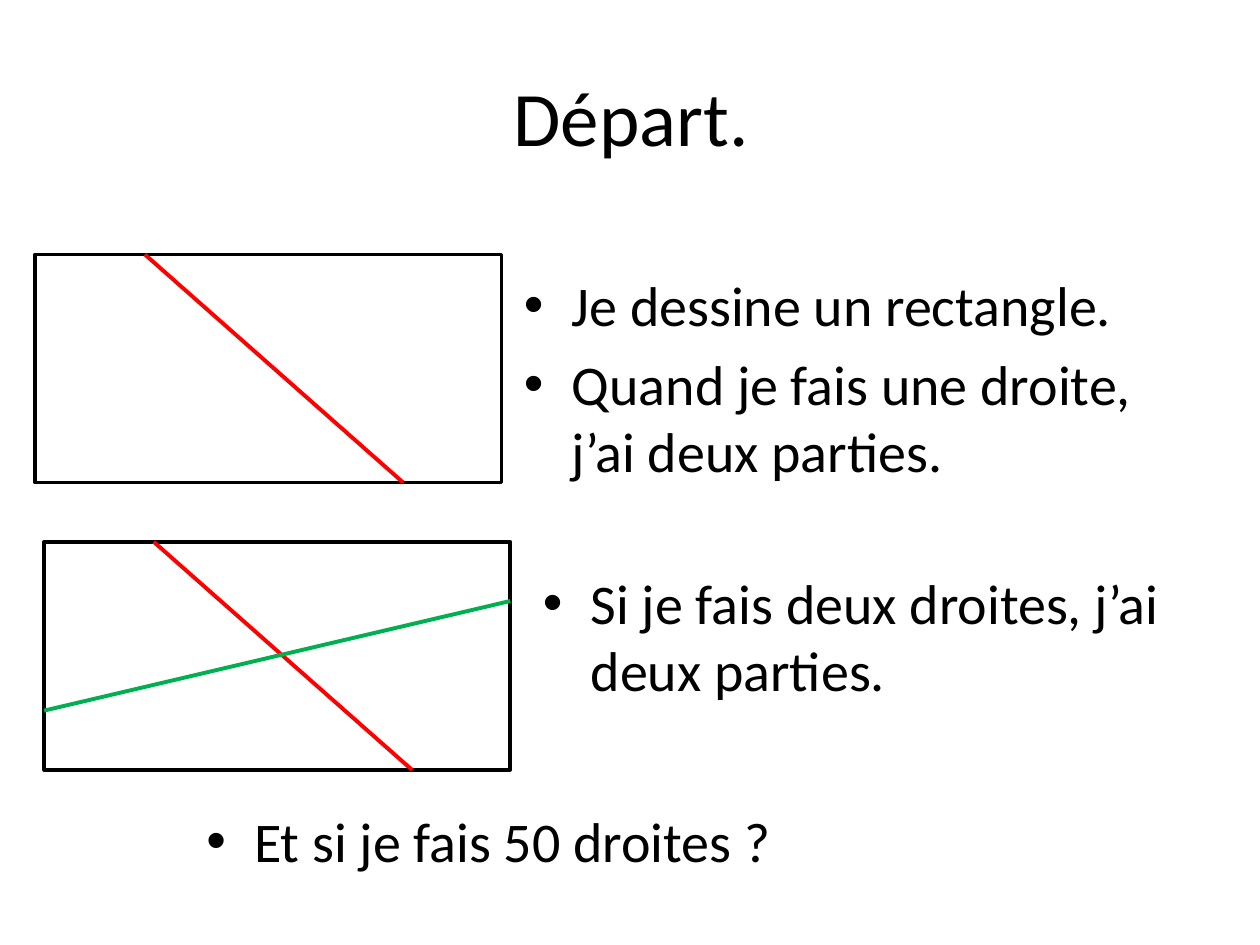
"""Build the "Départ." slide: rectangles divided by straight lines."""
from lxml import etree
from pptx import Presentation
from pptx.dml.color import RGBColor
from pptx.enum import shapes, text
from pptx.oxml import ns
from pptx.util import Inches, Pt

BLACK, RED, GREEN = "000000", "FF0000", "00B050"


def color(value):
    return RGBColor.from_string(value)


def add_text(slide, paragraphs, box, size=32, align=text.PP_ALIGN.LEFT,
             anchor=text.MSO_ANCHOR.TOP, bullet=True):
    frame = slide.shapes.add_textbox(*map(Inches, box)).text_frame
    frame.word_wrap = True
    frame.vertical_anchor = anchor
    frame.text = "\n".join(paragraphs)
    for paragraph in frame.paragraphs:
        paragraph.alignment = align
        paragraph.font.size = Pt(size)
        font = paragraph.runs[0].font
        font.name, font.size = "Calibri", Pt(size)
        font.color.rgb = color(BLACK)
        if bullet:
            paragraph.space_before = Pt(0.2 * size)
            properties = paragraph._p.get_or_add_pPr()
            properties.set("marL", str(Inches(0.38)))
            properties.set("indent", str(Inches(-0.38)))
            bullet_font = etree.Element(ns.qn("a:buFont"), typeface="Arial")
            bullet_char = etree.Element(ns.qn("a:buChar"), char="•")
            properties.find(ns.qn("a:spcBef")).addnext(bullet_font)
            bullet_font.addnext(bullet_char)


prs = Presentation()
prs.slide_width, prs.slide_height = Inches(10), Inches(7.5)
slide = prs.slides.add_slide(prs.slide_layouts[6])

add_text(slide, ["Départ."], (0.51, 0.29, 9, 1.25), size=44,
         align=text.PP_ALIGN.CENTER, anchor=text.MSO_ANCHOR.MIDDLE, bullet=False)
add_text(slide, ["Je dessine un rectangle.",
                 "Quand je fais une droite, j’ai deux parties."],
         (4.06, 2.1, 5.44, 1.69))

width, height = 3.7, 1.81
one_cut = [(RED, 0.87, 0, 2.92, height)]
two_cuts = one_cut + [(GREEN, 0, 1.34, width, 0.47)]
for left, top, cuts in [(0.28, 2.02, one_cut), (0.35, 4.3, two_cuts)]:
    rectangle = slide.shapes.add_shape(
        shapes.MSO_SHAPE.RECTANGLE, *map(Inches, (left, top, width, height)))
    rectangle.shadow.inherit = False
    rectangle.fill.background()
    rectangle.line.color.rgb = color(BLACK)
    rectangle.line.width = Pt(2)
    for cut_color, x1, y1, x2, y2 in cuts:
        cut = slide.shapes.add_connector(
            shapes.MSO_CONNECTOR.STRAIGHT,
            *map(Inches, (left + x1, top + y1, left + x2, top + y2)))
        cut.line.color.rgb = color(cut_color)
        cut.line.width = Pt(2.25)
        etree.SubElement(cut._element.spPr, ns.qn("a:effectLst"))

add_text(slide, ["Si je fais deux droites, j’ai deux parties."],
         (4.21, 4.46, 5.44, 1.26))
add_text(slide, ["Et si je fais 50 droites ?"], (1.54, 6.35, 7.64, 0.85))

prs.save("out.pptx")
